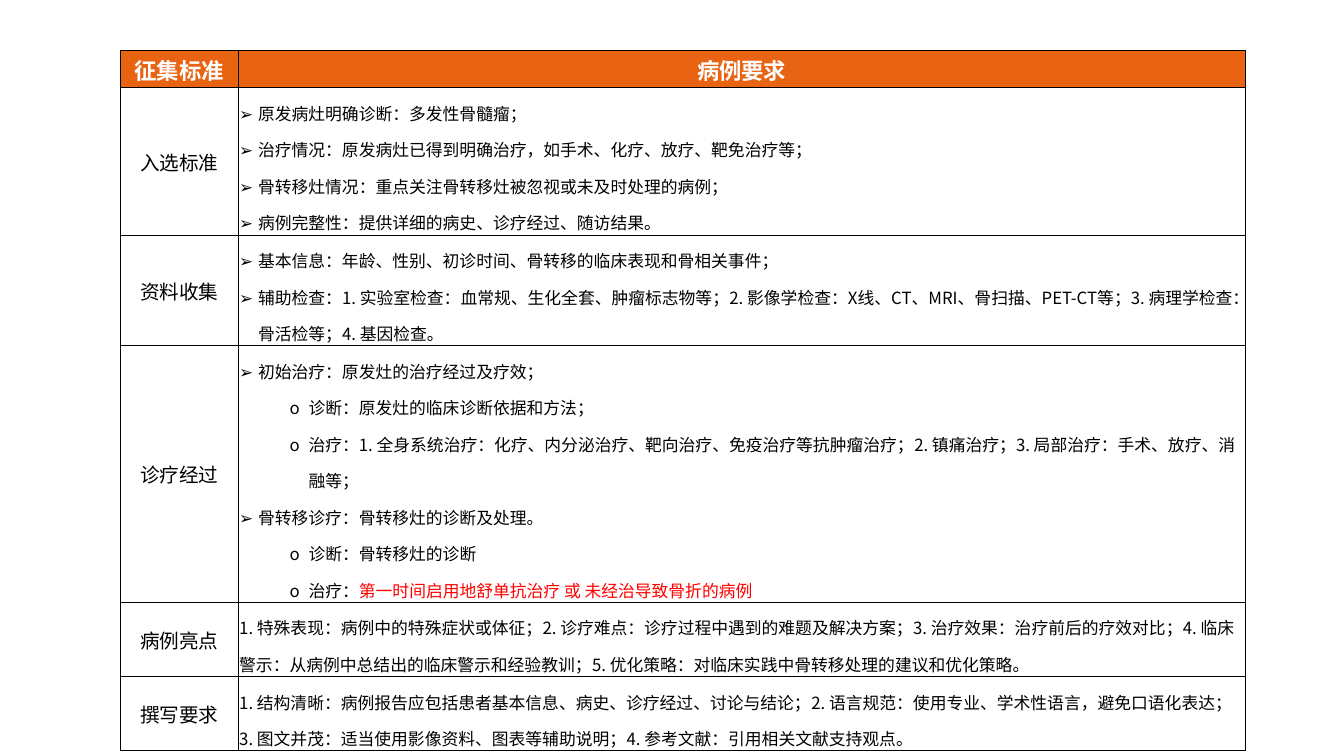
"""Build a one-slide table of case collection criteria."""
from dataclasses import dataclass

from lxml import etree
from pptx import Presentation
from pptx.dml.color import RGBColor
from pptx.enum.text import MSO_ANCHOR, PP_ALIGN
from pptx.oxml.ns import qn
from pptx.util import Pt

MIDDLE = MSO_ANCHOR.MIDDLE
CENTER = PP_ALIGN.CENTER
LEFT = PP_ALIGN.LEFT


@dataclass(frozen=True)
class Theme:
    font: str = "Noto Sans CJK SC"
    black: RGBColor = RGBColor(0, 0, 0)
    white: RGBColor = RGBColor(255, 255, 255)
    orange: RGBColor = RGBColor(0xE8, 0x64, 0x12)
    red: RGBColor = RGBColor(255, 0, 0)
    head: int = 16
    label: int = 14
    body: int = 12


@dataclass(frozen=True)
class Item:
    text: str
    level: int = 0
    bullet: str = "➢"
    alert: str = ""


@dataclass(frozen=True)
class Row:
    label: str
    height: float
    items: tuple


THEME = Theme()
HANG = 13.5
STEP = 36
HEAD = ("征集标准", "病例要求")
HEAD_HIGH = 26.6
WIDTHS = (84.2, 719.2)


def sub(text: str, alert: str = "") -> Item:
    """Make a second-level item."""
    return Item(text, 1, "o", alert)


def plain(text: str) -> Item:
    """Make an item without a bullet."""
    return Item(text, bullet="")


ROWS = (
    Row("入选标准", 90.7, (
        Item("原发病灶明确诊断：多发性骨髓瘤；"),
        Item("治疗情况：原发病灶已得到明确治疗，如手术、化疗、放疗、靶免治疗等；"),
        Item("骨转移灶情况：重点关注骨转移灶被忽视或未及时处理的病例；"),
        Item("病例完整性：提供详细的病史、诊疗经过、随访结果。"),
    )),
    Row("资料收集", 68.4, (
        Item("基本信息：年龄、性别、初诊时间、骨转移的临床表现和骨相关事件；"),
        Item("辅助检查：1. 实验室检查：血常规、生化全套、肿瘤标志物等；"
             "2. 影像学检查：X线、CT、MRI、骨扫描、PET-CT等；"
             "3. 病理学检查：骨活检等；4. 基因检查。"),
    )),
    Row("诊疗经过", 158.4, (
        Item("初始治疗：原发灶的治疗经过及疗效；"),
        sub("诊断：原发灶的临床诊断依据和方法；"),
        sub("治疗：1. 全身系统治疗：化疗、内分泌治疗、靶向治疗、免疫治疗等抗肿瘤治疗；"
            "2. 镇痛治疗；3. 局部治疗：手术、放疗、消融等；"),
        Item("骨转移诊疗：骨转移灶的诊断及处理。"),
        sub("诊断：骨转移灶的诊断"),
        sub("治疗：", "第一时间启用地舒单抗治疗 或 未经治导致骨折的病例"),
    )),
    Row("病例亮点", 50.4, (
        plain("1. 特殊表现：病例中的特殊症状或体征；2. 诊疗难点：诊疗过程中遇到的难题及解决方案；"
              "3. 治疗效果：治疗前后的疗效对比；4. 临床警示：从病例中总结出的临床警示和经验教训；"
              "5. 优化策略：对临床实践中骨转移处理的建议和优化策略。"),
    )),
    Row("撰写要求", 49, (
        plain("1. 结构清晰：病例报告应包括患者基本信息、病史、诊疗经过、讨论与结论；"
              "2. 语言规范：使用专业、学术性语言，避免口语化表达；"
              "3. 图文并茂：适当使用影像资料、图表等辅助说明；4. 参考文献：引用相关文献支持观点。"),
    )),
)


def style(run, size: int, color: RGBColor, bold: bool = False) -> None:
    """Give a run its font, size and colour."""
    font = run.font
    font.name, font.size, font.bold = THEME.font, Pt(size), bold
    font.color.rgb = color
    east = etree.SubElement(run._r.get_or_add_rPr(), qn("a:ea"))
    east.set("typeface", THEME.font)


def frame(cell, fill: RGBColor) -> None:
    """Set the borders, fill, margins and anchor of a cell."""
    props = cell._tc.get_or_add_tcPr()
    for side in "LRTB":
        line = etree.SubElement(props, qn(f"a:ln{side}"), w=str(Pt(0.5)))
        paint = etree.SubElement(line, qn("a:solidFill"))
        etree.SubElement(paint, qn("a:srgbClr"), val=str(THEME.black))
    cell.fill.solid()
    cell.fill.fore_color.rgb = fill
    cell.margin_left = cell.margin_right = cell.margin_top = Pt(0.7)
    cell.margin_bottom = Pt(0)
    cell.vertical_anchor = MIDDLE


def title(cell, text: str, size: int, color: RGBColor, fill: RGBColor,
          bold: bool = False) -> None:
    """Write one centred line in a cell."""
    frame(cell, fill)
    cell.text_frame.text = text
    para = cell.text_frame.paragraphs[0]
    para.alignment = CENTER
    style(para.runs[0], size, color, bold)


def write(para, item: Item) -> None:
    """Write an item in a paragraph."""
    para.text = item.text
    para.alignment = LEFT
    para.line_spacing = 1.5
    if item.bullet:
        para.level = item.level
        props = para._p.get_or_add_pPr()
        props.set("marL", str(Pt(HANG + STEP * item.level)))
        props.set("indent", str(-Pt(HANG)))
        etree.SubElement(props, qn("a:buFont"), typeface=THEME.font)
        etree.SubElement(props, qn("a:buChar"), char=item.bullet)
    style(para.runs[0], THEME.body, THEME.black)
    if item.alert:
        run = para.add_run()
        run.text = item.alert
        style(run, THEME.body, THEME.red)


def body(cell, items: tuple) -> None:
    """Fill a cell with items."""
    frame(cell, THEME.white)
    text = cell.text_frame
    for num, item in enumerate(items):
        write(text.add_paragraph() if num else text.paragraphs[0], item)


def main() -> None:
    """Build and save the slide."""
    deck = Presentation()
    deck.slide_width, deck.slide_height = Pt(960), Pt(540)
    slide = deck.slides.add_slide(deck.slide_layouts[6])
    highs = (HEAD_HIGH, *(row.height for row in ROWS))
    table = slide.shapes.add_table(
        len(highs), len(WIDTHS), Pt(86), Pt(36),
        Pt(sum(WIDTHS)), Pt(sum(highs))).table
    table.horz_banding = False
    for col, width in zip(table.columns, WIDTHS):
        col.width = Pt(width)
    for line, high in zip(table.rows, highs):
        line.height = Pt(high)
    for num, text in enumerate(HEAD):
        title(table.cell(0, num), text, THEME.head, THEME.white,
              THEME.orange, True)
    for num, row in enumerate(ROWS, 1):
        title(table.cell(num, 0), row.label, THEME.label, THEME.black,
              THEME.white)
        body(table.cell(num, 1), row.items)
    deck.save("out.pptx")


if __name__ == "__main__":
    main()
